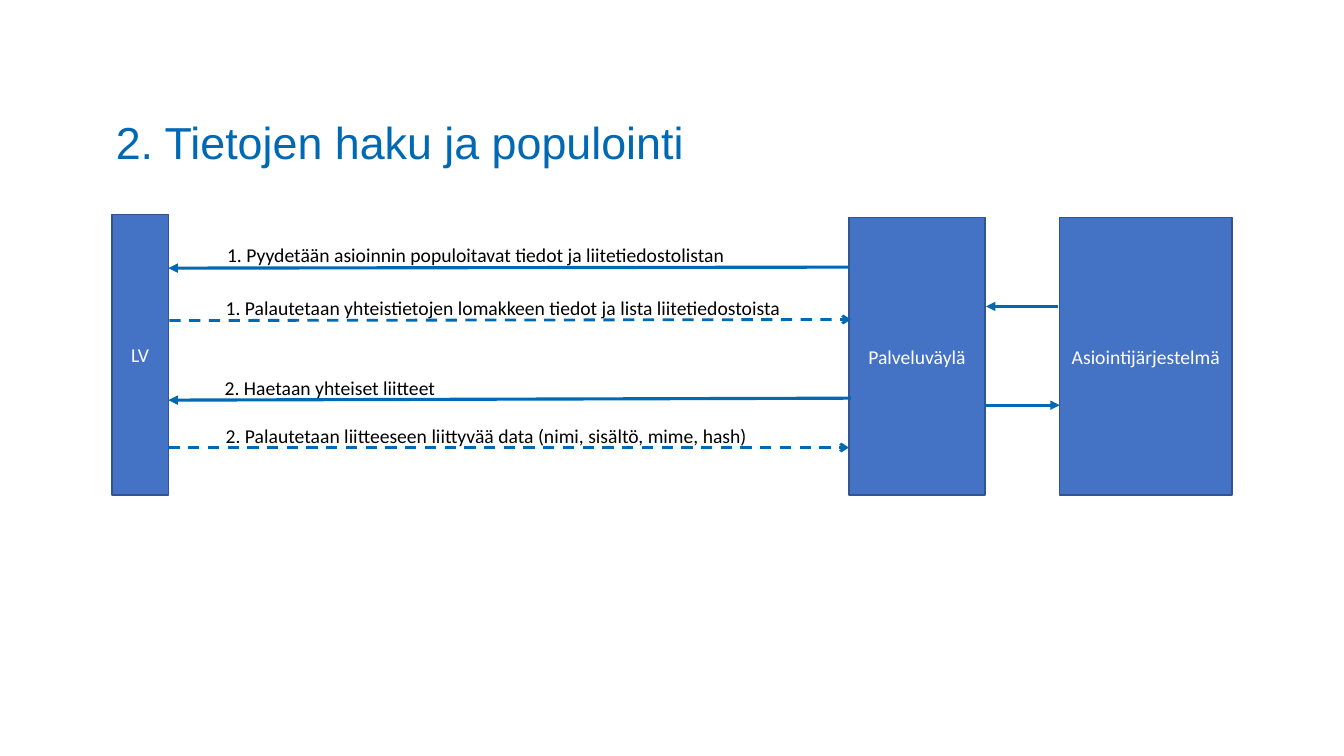
from lxml.etree import SubElement
from pptx import Presentation
from pptx.dml.color import RGBColor
from pptx.enum.dml import MSO_LINE
from pptx.enum.shapes import MSO_CONNECTOR, MSO_SHAPE
from pptx.enum.text import MSO_ANCHOR, PP_ALIGN
from pptx.oxml.ns import qn
from pptx.util import Pt

SCALE = 9144
BLUE = "0069B4"
BOXES = [
    ("LV", 111, 213, 56, 278),
    ("Palveluväylä", 842, 216, 135, 275),
    ("Asiointijärjestelmä", 1051, 216, 171, 275),
]
CALLS = [
    (842, 265, 167, 266),
    (844, 395, 167, 397),
    (1049, 304, 978, 304),
    (978, 402, 1051, 402),
]
REPLIES = [(168, 318, 844, 317), (167, 444, 842, 444)]
LABELS = [
    ("1. Pyydetään asioinnin populoitavat tiedot ja liitetiedostolistan",
     214, 236, 516, PP_ALIGN.CENTER),
    ("1. Palautetaan yhteistietojen lomakkeen tiedot ja lista liitetiedostoista",
     208, 289, 582, PP_ALIGN.CENTER),
    ("2. Haetaan yhteiset liitteet", 213, 368, 238, PP_ALIGN.LEFT),
    ("2. Palautetaan liitteeseen liittyvää data (nimi, sisältö, mime, hash)",
     214, 416, 596, PP_ALIGN.LEFT),
]


def px(*vals):
    """Turn px lengths into EMU."""
    return [val * SCALE for val in vals]


def color(code):
    """Return the colour of a hex string."""
    return RGBColor.from_string(code)


def write(shape, text, size, code, align, font="Calibri",
          anchor=MSO_ANCHOR.MIDDLE):
    """Put one styled run in a shape and return its paragraph."""
    frame = shape.text_frame
    frame.word_wrap = True
    frame.vertical_anchor = anchor
    para = frame.paragraphs[0]
    para.alignment = align
    run = para.add_run()
    run.text = text
    run.font.name = font
    run.font.size = Pt(size)
    run.font.color.rgb = color(code)
    return para


def add_title(slide, text):
    """Add the slide title."""
    shape = slide.shapes.add_textbox(*px(105, 93, 1000, 101))
    shape.fill.solid()
    shape.fill.fore_color.rgb = color("FFFFFF")
    para = write(shape, text, 32, BLUE, PP_ALIGN.LEFT, "Arial")
    para.line_spacing = 0.9


def add_box(slide, text, *place):
    """Add a filled system box with its name."""
    shape = slide.shapes.add_shape(MSO_SHAPE.RECTANGLE, *px(*place))
    shape.shadow.inherit = False
    shape.fill.solid()
    shape.fill.fore_color.rgb = color("4472C4")
    shape.line.color.rgb = color("325491")
    shape.line.width = Pt(1)
    write(shape, text, 14, "FFFFFF", PP_ALIGN.CENTER)


def add_label(slide, text, left, top, width, align):
    """Add the text above a message arrow."""
    shape = slide.shapes.add_textbox(*px(left, top, width, 34))
    write(shape, text, 14, "000000", align, anchor=MSO_ANCHOR.TOP)


def add_arrow(slide, ends, width, head, dash=None):
    """Add an arrow with its head at the last point."""
    arrow = slide.shapes.add_connector(MSO_CONNECTOR.STRAIGHT, *px(*ends))
    arrow.line.color.rgb = color(BLUE)
    arrow.line.width = Pt(width)
    if dash:
        arrow.line.dash_style = dash
    props = arrow.element.spPr
    SubElement(props.find(qn("a:ln")), qn("a:tailEnd"), type=head)
    SubElement(props, qn("a:effectLst"))


def main():
    """Build and save the slide."""
    deck = Presentation()
    deck.slide_width, deck.slide_height = px(1333, 750)
    slide = deck.slides.add_slide(deck.slide_layouts[6])
    add_title(slide, "2. Tietojen haku ja populointi")
    for box in BOXES:
        add_box(slide, *box)
    for ends in CALLS:
        add_arrow(slide, ends, 2.25, "triangle")
    for ends in REPLIES:
        add_arrow(slide, ends, 2, "arrow", MSO_LINE.DASH)
    for label in LABELS:
        add_label(slide, *label)
    deck.save("out.pptx")


if __name__ == "__main__":
    main()
